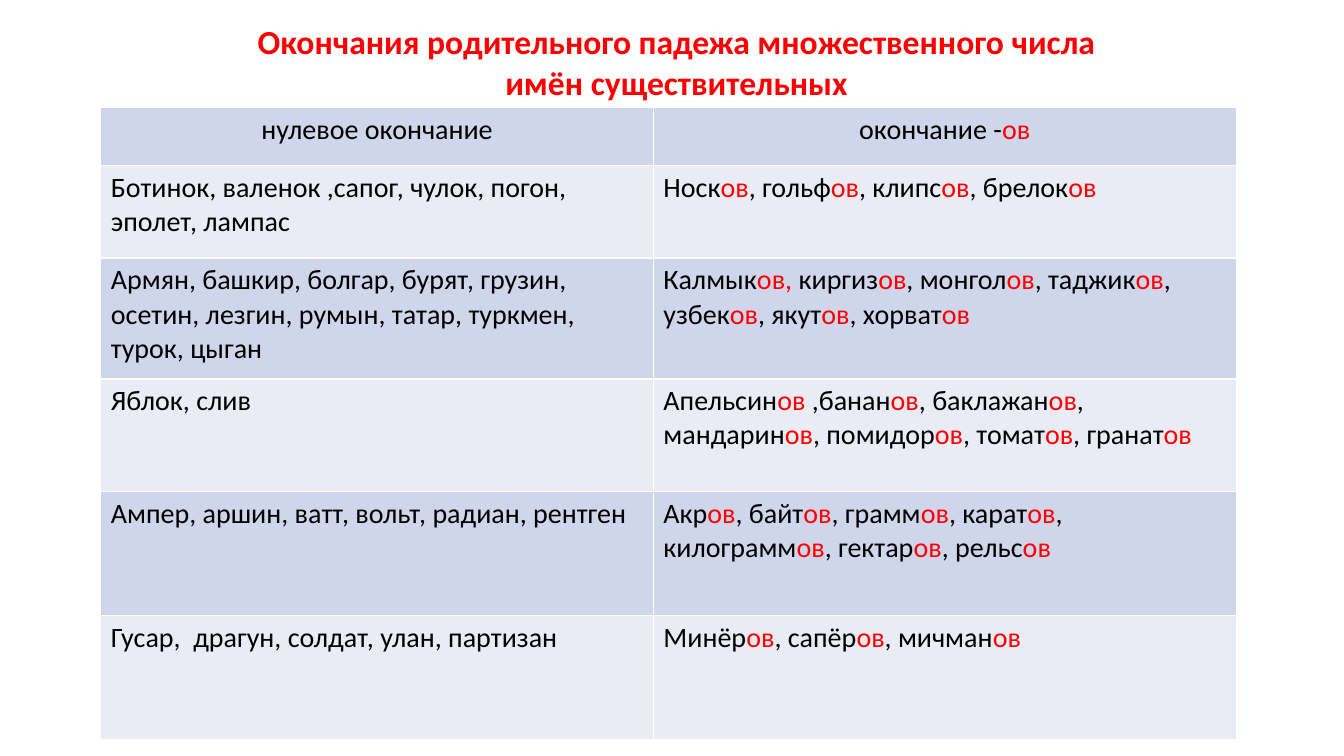
from pptx import Presentation
from pptx.dml.color import RGBColor
from pptx.enum.text import MSO_AUTO_SIZE, PP_ALIGN
from pptx.util import Inches, Pt

LEFT, CENTER = PP_ALIGN.LEFT, PP_ALIGN.CENTER
FIT = MSO_AUTO_SIZE.SHAPE_TO_FIT_TEXT
RED, BLACK = "FF0000", "000000"
BANDS = ["CFD5EA", "E9EBF5"]


def paint(hue):
    return RGBColor.from_string(hue)


def write(frame, text, size=20, bold=False, align=LEFT):
    """Fill a text frame; parts between bars are red."""
    para = frame.paragraphs[0]
    para.alignment = align
    for i, part in enumerate(text.split("|")):
        if part:
            run = para.add_run()
            run.text = part
            run.font.name = "Calibri"
            run.font.size = Pt(size)
            run.font.bold = bold
            run.font.color.rgb = paint(RED if i % 2 else BLACK)


deck = Presentation()
deck.slide_width, deck.slide_height = Inches(13.33), Inches(7.5)
slide = deck.slides.add_slide(deck.slide_layouts[6])

# Title
box = slide.shapes.add_textbox(Inches(2.26), Inches(0.16), Inches(8.9), Inches(0.91))
box.text_frame.word_wrap = True
box.text_frame.auto_size = FIT
write(box.text_frame,
      "|Окончания родительного падежа множественного числа имён существительных",
      size=24, bold=True, align=CENTER)

# Table content
rows = [
    (" нулевое окончание ", "окончание -|ов|"),
    ("Ботинок, валенок ,сапог, чулок, погон, эполет, лампас",
     "Носк|ов|, гольф|ов|, клипс|ов|, брелок|ов|"),
    ("Армян, башкир, болгар, бурят, грузин, осетин, лезгин, румын, татар, "
     "туркмен, турок, цыган",
     "Калмык|ов, |киргиз|ов|, монгол|ов|, таджик|ов|, узбек|ов|, якут|ов|, хорват|ов|"),
    ("Яблок, слив",
     "Апельсин|ов |,банан|ов|, баклажан|ов|, мандарин|ов|, помидор|ов|, "
     "томат|ов|, гранат|ов|"),
    ("Ампер, аршин, ватт, вольт, радиан, рентген",
     "Акр|ов|, байт|ов|, грамм|ов|, карат|ов|, килограмм|ов|, гектар|ов|, рельс|ов|"),
    ("Гусар,  драгун, солдат, улан, партизан",
     "Минёр|ов|, сапёр|ов|, мичман|ов|"),
]
widths = [5.48, 5.78]
heights = [0.57, 0.92, 1.2, 1.12, 1.23, 1.23]

# Table grid
table = slide.shapes.add_table(
    len(rows), len(widths), Inches(1), Inches(1.07),
    Inches(sum(widths)), Inches(sum(heights))).table
table.first_row = False
table.horz_banding = False
for col, width in zip(table.columns, widths):
    col.width = Inches(width)

# Table cells
for r, (texts, height) in enumerate(zip(rows, heights)):
    table.rows[r].height = Inches(height)
    for c, text in enumerate(texts):
        cell = table.cell(r, c)
        cell.fill.solid()
        cell.fill.fore_color.rgb = paint(BANDS[r % 2])
        write(cell.text_frame, text, align=LEFT if r else CENTER)

deck.save("out.pptx")
